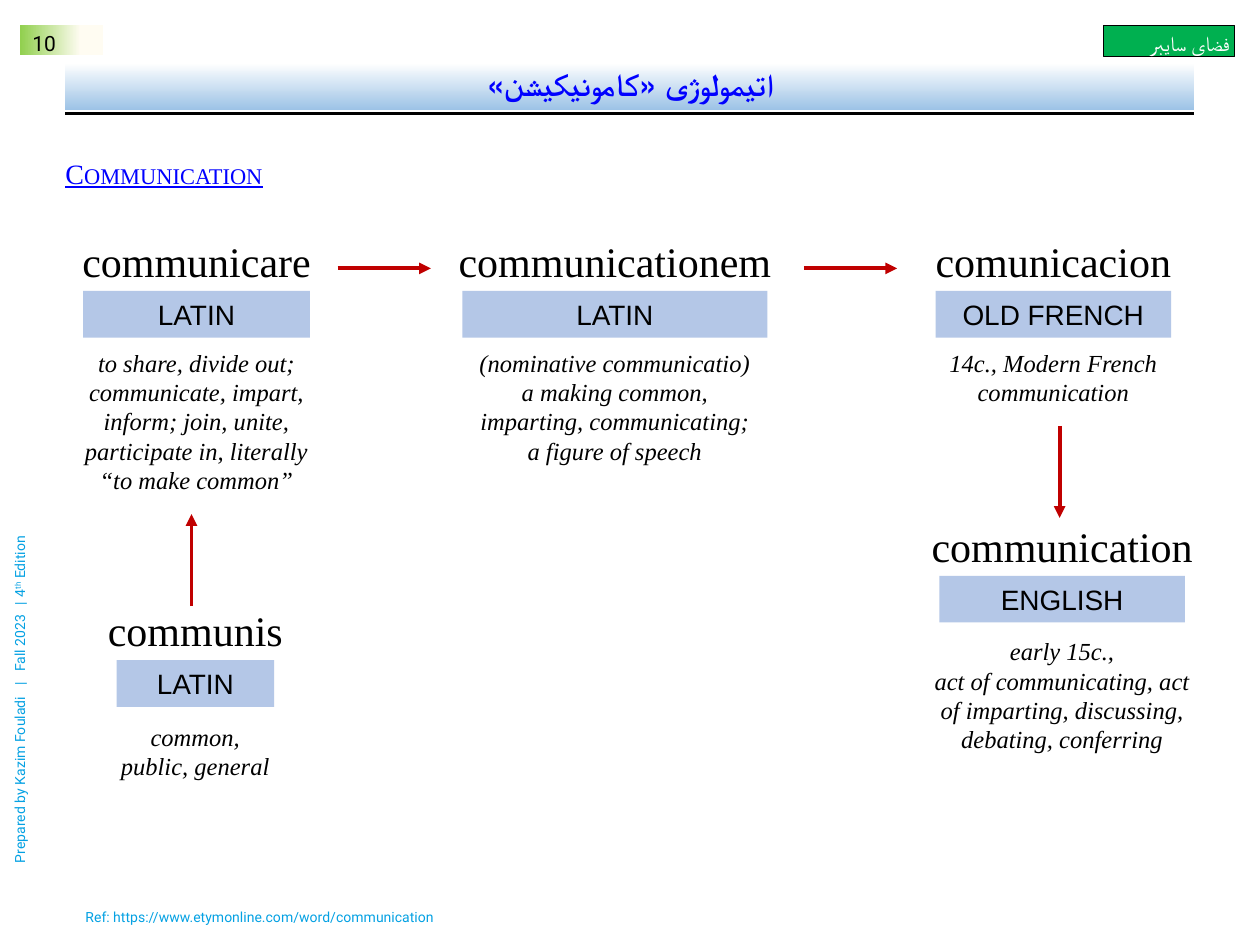
import dataclasses

import pptx
import pptx.dml.color
import pptx.enum.dml
import pptx.enum.shapes
import pptx.enum.text
import pptx.oxml
import pptx.oxml.ns
import pptx.util

ALIGN = pptx.enum.text.PP_ALIGN
ANCHOR = pptx.enum.text.MSO_ANCHOR


@dataclasses.dataclass(frozen=True)
class Style:
    """Type settings of one kind of text."""

    font: str
    size: float
    color: str
    bold: bool = False
    italic: bool = False
    underline: bool = False
    small_caps: bool = False


@dataclasses.dataclass(frozen=True)
class Theme:
    """Colours, type sizes and grid of the slide."""

    columns: int = 100
    rows: int = 75
    black: str = "000000"
    arrow: str = "C00000"
    language: str = "B4C7E7"
    topic: str = "00B050"
    title_fade: tuple = ((0, "FFFFFF"), (1, "9DC3E6"))
    number_fade: tuple = ((0.27, "FFFCF2"), (0.99, "92D050"))
    title: Style = Style("Calibri", 18, "0000FF", bold=True)
    heading: Style = Style("Times New Roman", 16, "0000FF", underline=True, small_caps=True)
    word: Style = Style("Times New Roman", 24, "000000")
    label: Style = Style("Arial", 16, "000000")
    gloss: Style = Style("Times New Roman", 14, "000000", italic=True)
    number: Style = Style("Roboto", 12, "000000")
    topic_text: Style = Style("Arial", 12, "FFFFFF")
    note: Style = Style("Roboto", 8, "04A1E3")


@dataclasses.dataclass(frozen=True)
class Stage:
    """One form of the word, placed by its centre column and top row."""

    center: float
    top: float
    word: str
    language: str
    label_width: float
    gloss: str
    gloss_width: float
    gloss_drop: float


THEME = Theme()
WIDTH = pptx.util.Inches(10)
HEIGHT = pptx.util.Inches(7.5)

STAGES = (
    Stage(15.6, 18.2, "communicare", "LATIN", 18,
          "to share, divide out; communicate, impart, inform; join, unite, "
          "participate in, literally\n“to make common”", 23, 8.9),
    Stage(48.8, 18.2, "communicationem", "LATIN", 24.2,
          "(nominative communicatio)\na making common,\n"
          "imparting, communicating;\na figure of speech", 26, 8.9),
    Stage(83.6, 18.2, "comunicacion", "OLD FRENCH", 18.7,
          "14c., Modern French communication", 20.9, 8.9),
    Stage(15.5, 47.5, "communis", "LATIN", 12.5,
          "common,\npublic, general", 20.3, 9.3),
    Stage(84.3, 40.8, "communication", "ENGLISH", 19.5,
          "early 15c.,\nact of communicating, act of imparting, discussing, "
          "debating, conferring", 23, 9.2),
)
ARROWS = (
    (26.8, 21.3, 34.2, 21.3),
    (63.8, 21.3, 71.2, 21.3),
    (84.1, 33.8, 84.1, 41.1),
    (15.2, 48.1, 15.2, 40.8),
)


def place(left, top, right, bottom):
    """Turn two pairs of columns and rows into lengths."""
    column, row = WIDTH / THEME.columns, HEIGHT / THEME.rows
    return [round(left * column), round(top * row), round(right * column), round(bottom * row)]


def rgb(color):
    """Return a colour object."""
    return pptx.dml.color.RGBColor.from_string(color)


def add_span(para, text, style, baseline=None):
    """Add one styled run."""
    span = para.add_run()
    span.text = text
    font = span.font
    font.name, font.size = style.font, pptx.util.Pt(style.size)
    font.bold, font.italic, font.underline = style.bold, style.italic, style.underline
    font.color.rgb = rgb(style.color)
    if style.small_caps:
        span._r.get_or_add_rPr().set("cap", "small")
    if baseline:
        span._r.get_or_add_rPr().set("baseline", str(baseline))


def write(box, text, style, align=ALIGN.CENTER, anchor=ANCHOR.TOP, insets=(0.1, 0.05, 0.1, 0.05)):
    """Fill a box with one paragraph, run by run, and return the paragraph."""
    frame = box.text_frame
    frame.word_wrap = True
    frame.vertical_anchor = anchor
    (frame.margin_left, frame.margin_top,
     frame.margin_right, frame.margin_bottom) = map(pptx.util.Inches, insets)
    para = frame.paragraphs[0]
    para.alignment = align
    for index, line in enumerate(text.split("\n")):
        if index:
            para.add_line_break()
        add_span(para, line, style)
    return para


def add_text(page, area, text, style, **options):
    """Add a text box and return its paragraph."""
    return write(page.shapes.add_textbox(*place(*area)), text, style, **options)


def add_panel(page, area, color=None, outline=None, fade=None, angle=0):
    """Add a rectangle with a plain or a gradient fill."""
    panel = page.shapes.add_shape(pptx.enum.shapes.MSO_SHAPE.RECTANGLE, *place(*area))
    panel.shadow.inherit = False
    if fade:
        panel.fill.gradient()
        panel.fill.gradient_angle = angle
        for stop, (position, stop_color) in zip(panel.fill.gradient_stops, fade):
            stop.position, stop.color.rgb = position, rgb(stop_color)
    else:
        panel.fill.solid()
        panel.fill.fore_color.rgb = rgb(color)
    if outline:
        panel.line.color.rgb = rgb(outline)
        panel.line.width = pptx.util.Pt(0.5)
    else:
        panel.line.fill.background()
    return panel


def add_line(page, ends, color, width, arrow=False):
    """Add a straight line, with an arrowhead at its end if wanted."""
    line = page.shapes.add_connector(pptx.enum.shapes.MSO_CONNECTOR.STRAIGHT, *place(*ends))
    line.line.color.rgb = rgb(color)
    line.line.width = pptx.util.Pt(width)
    if arrow:
        head = pptx.oxml.ns.qn("a:tailEnd")
        line.line._get_or_add_ln().append(
            line._element.makeelement(head, {"type": "triangle"}))
    effects = pptx.oxml.ns.qn("a:effectLst")
    line._element.spPr.append(line._element.makeelement(effects, {}))


def add_stage(page, stage):
    """Add a word, its language label and its meaning, centred on one column."""
    def area(width, drop, height):
        return stage.center - width / 2, stage.top + drop, width, height

    add_text(page, area(29.2, 0, 5), stage.word, THEME.word)
    label = add_panel(page, area(stage.label_width, 4.9, 3.7), THEME.language)
    write(label, stage.language, THEME.label, anchor=ANCHOR.MIDDLE)
    add_text(page, area(stage.gloss_width, stage.gloss_drop, 10.4), stage.gloss, THEME.gloss)


def add_edition(page):
    """Add the upright edition note with its parts set on tab stops."""
    box = page.shapes.add_textbox(*place(-13.2, 53.5, 29.6, 2.4))
    box.rotation = 270
    properties = box.text_frame.paragraphs[0]._p.get_or_add_pPr()
    stops = properties.makeelement(pptx.oxml.ns.qn("a:tabLst"), {})
    for inches in (1.41, 1.52, 2.05, 2.11):
        stops.append(stops.makeelement(
            pptx.oxml.ns.qn("a:tab"), {"pos": str(pptx.util.Inches(inches)), "algn": "l"}))
    properties.append(stops)
    para = write(box, "Prepared by Kazim Fouladi\t|\tFall 2023\t|\t4", THEME.note, align=ALIGN.LEFT)
    add_span(para, "th", THEME.note, baseline=30000)
    add_span(para, " Edition", THEME.note)


def add_frame(page):
    """Add the page number, topic, title, heading and notes."""
    add_line(page, (5.2, 9, 94.8, 9), THEME.black, 1.5)
    number = add_panel(page, (1.6, 2, 6.6, 2.4), fade=THEME.number_fade, angle=180)
    write(number, "10", THEME.number, align=ALIGN.LEFT, insets=(0.1, 0.04, 0.1, 0))
    topic = add_panel(page, (87.6, 2, 10.4, 2.5), THEME.topic, outline=THEME.black)
    write(topic, "فضای سایبر", THEME.topic_text, align=ALIGN.RIGHT,
          anchor=ANCHOR.MIDDLE, insets=(0.04, 0.08, 0.04, 0.05))
    add_edition(page)
    title = add_panel(page, (5.2, 5, 89.6, 3.7), fade=THEME.title_fade, angle=270)
    para = write(title, "اتیمولوژی «کامونیکیشن»", THEME.title, anchor=ANCHOR.MIDDLE)
    para.line_spacing = 0.9
    para._p.get_or_add_pPr().set("rtl", "1")
    heading = add_text(page, (5.2, 12.2, 89.6, 2.2), "Communication", THEME.heading,
                       align=ALIGN.LEFT, insets=(0, 0.05, 0.1, 0.05))
    heading.line_spacing = 0.9
    add_text(page, (5.8, 71.6, 59.7, 2.4), "Ref: https://www.etymonline.com/word/communication",
             THEME.note, align=ALIGN.LEFT)


def main():
    """Build the slide and save it."""
    deck = pptx.Presentation()
    deck.slide_width, deck.slide_height = WIDTH, HEIGHT
    page = deck.slides.add_slide(deck.slide_layouts[6])
    add_frame(page)
    for stage in STAGES:
        add_stage(page, stage)
    for ends in ARROWS:
        add_line(page, ends, THEME.arrow, 2.25, arrow=True)
    deck.save("out.pptx")


if __name__ == "__main__":
    main()
